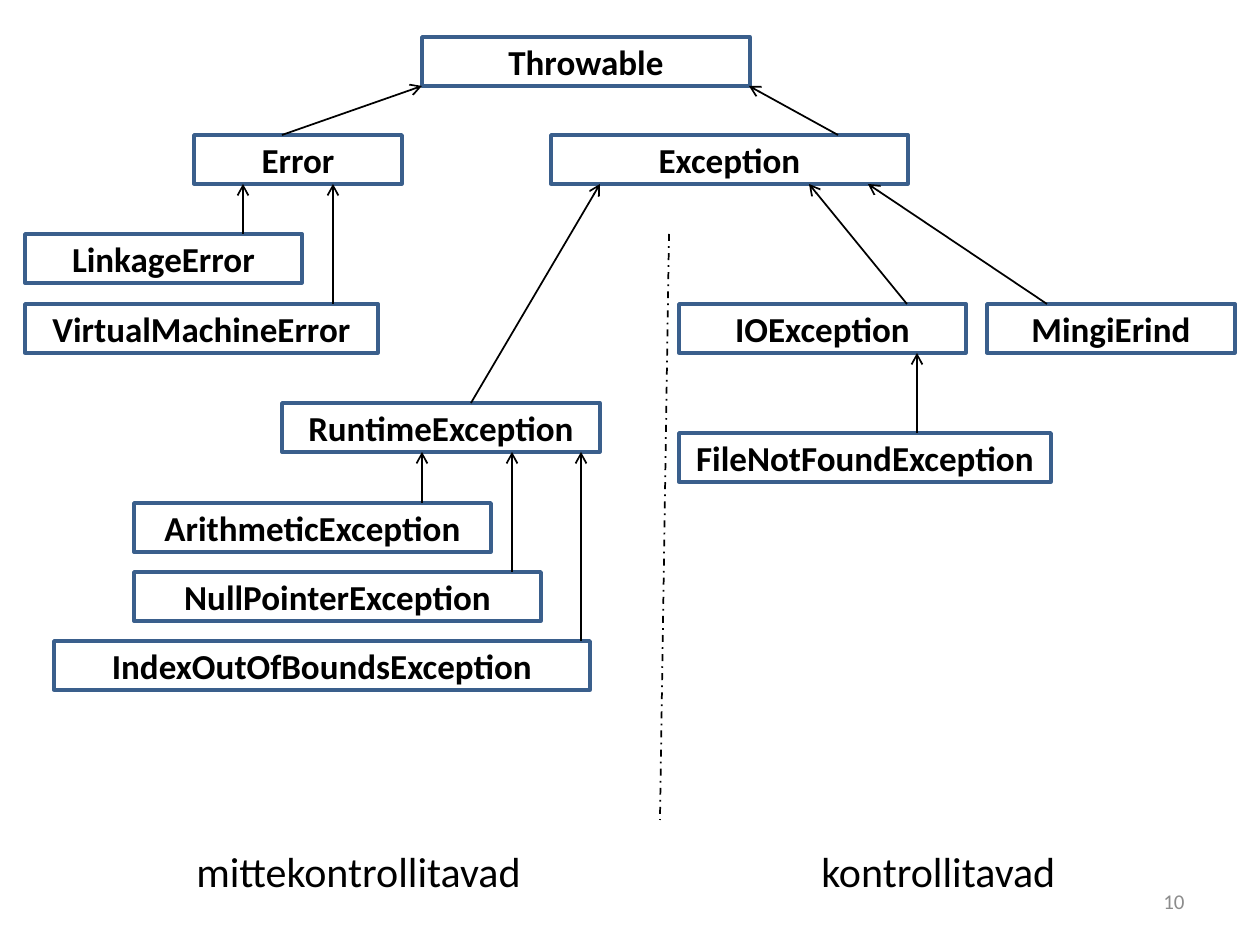
from dataclasses import dataclass

from lxml.etree import SubElement
from pptx import Presentation
from pptx.dml.color import RGBColor
from pptx.enum.dml import MSO_LINE
from pptx.enum.shapes import MSO_CONNECTOR, MSO_SHAPE
from pptx.enum.text import MSO_ANCHOR, MSO_AUTO_SIZE, PP_ALIGN
from pptx.oxml.ns import qn
from pptx.util import Emu, Pt

PX = 914400 / 126
BOX_HEIGHT = 49
FONT = "Calibri"
BLACK, WHITE, BLUE, GREY = "000000", "FFFFFF", "3A5F8C", "8C8C8C"


@dataclass(frozen=True)
class ClassBox:
    name: str
    left: int
    top: int
    width: int


@dataclass(frozen=True)
class Inheritance:
    child: str
    parent: str
    start_x: int
    end_x: int


@dataclass(frozen=True)
class Label:
    text: str
    left: int
    top: int
    width: int
    height: int


CLASSES = [
    ClassBox("Throwable", 422, 37, 328),
    ClassBox("Error", 194, 135, 208),
    ClassBox("Exception", 551, 135, 357),
    ClassBox("VirtualMachineError", 25, 304, 353),
    ClassBox("LinkageError", 25, 234, 277),
    ClassBox("IndexOutOfBoundsException", 54, 641, 536),
    ClassBox("NullPointerException", 134, 572, 407),
    ClassBox("ArithmeticException", 134, 503, 357),
    ClassBox("RuntimeException", 282, 403, 318),
    ClassBox("IOException", 679, 304, 287),
    ClassBox("FileNotFoundException", 679, 433, 372),
    ClassBox("MingiErind", 987, 304, 248),
]

# Each arrow runs from the top of the child to the bottom of the parent
INHERITANCES = [
    Inheritance("Error", "Throwable", 282, 422),
    Inheritance("RuntimeException", "Exception", 471, 600),
    Inheritance("VirtualMachineError", "Error", 333, 333),
    Inheritance("Exception", "Throwable", 838, 749),
    Inheritance("LinkageError", "Error", 243, 243),
    Inheritance("IndexOutOfBoundsException", "RuntimeException", 581, 581),
    Inheritance("ArithmeticException", "RuntimeException", 422, 422),
    Inheritance("NullPointerException", "RuntimeException", 512, 512),
    Inheritance("FileNotFoundException", "IOException", 917, 917),
    Inheritance("IOException", "Exception", 907, 809),
    Inheritance("MingiErind", "Exception", 1047, 868),
]

PAGE_NUMBER = Label("10", 903, 876, 294, 50)
GROUP_LABELS = [
    Label("mittekontrollitavad", 184, 839, 354, 63),
    Label("kontrollitavad", 809, 839, 262, 63),
]


def px(length: int) -> Emu:
    return Emu(round(length * PX))


def color(value: str) -> RGBColor:
    return RGBColor.from_string(value)


def write(frame, text: str, size: int, ink: str, align, bold: bool = False) -> None:
    para = frame.paragraphs[0]
    para.text = text
    para.alignment = align
    para.font.name = FONT
    para.font.size = Pt(size)
    para.font.bold = bold
    para.font.color.rgb = color(ink)


def draw_class(page, item: ClassBox) -> None:
    box = page.shapes.add_shape(MSO_SHAPE.RECTANGLE, px(item.left), px(item.top),
                                px(item.width), px(BOX_HEIGHT))
    box.shadow.inherit = False
    box.fill.solid()
    box.fill.fore_color.rgb = color(WHITE)
    box.line.color.rgb = color(BLUE)
    box.line.width = Pt(2)
    box.text_frame.vertical_anchor = MSO_ANCHOR.MIDDLE
    write(box.text_frame, item.name, 20, BLACK, PP_ALIGN.CENTER, bold=True)


def add_label(page, label: Label):
    box = page.shapes.add_textbox(px(label.left), px(label.top),
                                  px(label.width), px(label.height))
    return box.text_frame


def draw_line(page, start: tuple[int, int], end: tuple[int, int]):
    line = page.shapes.add_connector(MSO_CONNECTOR.STRAIGHT,
                                     *map(px, start), *map(px, end))
    line.line.color.rgb = color(BLACK)
    line.line.width = Pt(1)
    SubElement(line._element.spPr, qn("a:effectLst"))
    return line


def draw_inheritance(page, link: Inheritance, classes: dict[str, ClassBox]) -> None:
    start = (link.start_x, classes[link.child].top)
    end = (link.end_x, classes[link.parent].top + BOX_HEIGHT)
    arrow = draw_line(page, start, end)
    SubElement(arrow.line._get_or_add_ln(), qn("a:tailEnd"), type="arrow")


def main() -> None:
    deck = Presentation()
    deck.slide_width, deck.slide_height = px(1260), px(945)
    page = deck.slides.add_slide(deck.slide_layouts[6])

    # Page number
    frame = add_label(page, PAGE_NUMBER)
    frame.word_wrap = True
    frame.vertical_anchor = MSO_ANCHOR.MIDDLE
    write(frame, PAGE_NUMBER.text, 12, GREY, PP_ALIGN.RIGHT)

    # Class boxes
    for item in CLASSES:
        draw_class(page, item)

    # Divider between unchecked and checked exceptions
    divider = draw_line(page, (669, 234), (660, 820))
    divider.line.dash_style = MSO_LINE.DASH_DOT

    # Group labels
    for label in GROUP_LABELS:
        frame = add_label(page, label)
        frame.word_wrap = False
        frame.auto_size = MSO_AUTO_SIZE.SHAPE_TO_FIT_TEXT
        write(frame, label.text, 24, BLACK, PP_ALIGN.LEFT)

    # Inheritance arrows
    classes = {item.name: item for item in CLASSES}
    for link in INHERITANCES:
        draw_inheritance(page, link, classes)

    deck.save("out.pptx")


if __name__ == "__main__":
    main()
